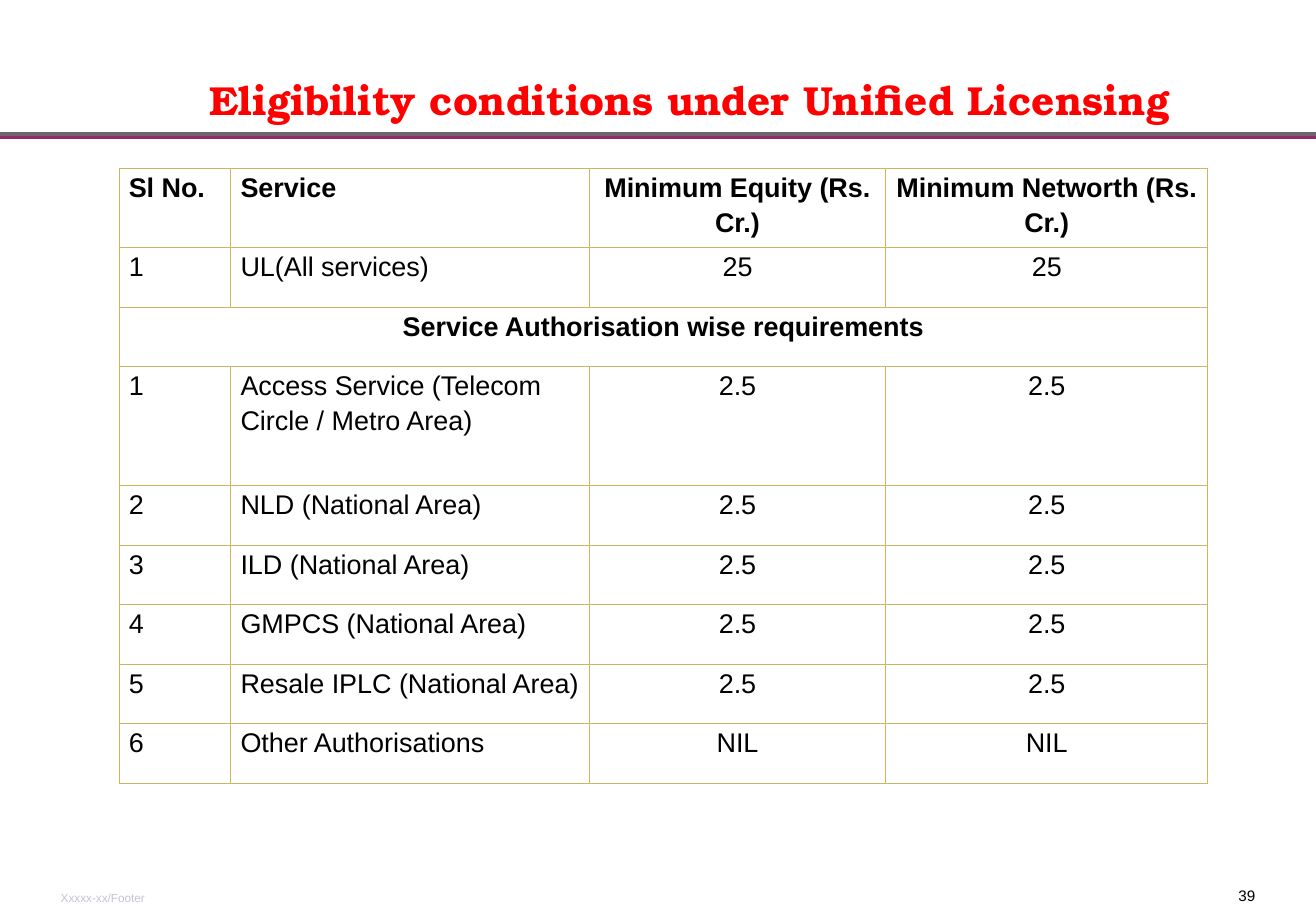
from dataclasses import dataclass

from lxml import etree
from pptx import Presentation
from pptx.dml.color import RGBColor
from pptx.enum.shapes import MSO_CONNECTOR
from pptx.enum.text import MSO_ANCHOR, PP_ALIGN
from pptx.oxml.ns import qn
from pptx.util import Emu, Pt

EMU_PER_PX = 9144
LEFT, CENTER, RIGHT = PP_ALIGN.LEFT, PP_ALIGN.CENTER, PP_ALIGN.RIGHT
TOP, MIDDLE, BOTTOM = MSO_ANCHOR.TOP, MSO_ANCHOR.MIDDLE, MSO_ANCHOR.BOTTOM
STRAIGHT = MSO_CONNECTOR.STRAIGHT
WHITE, BLACK, RED = "FFFFFF", "000000", "FF0000"
GREY, PURPLE, GOLD, PALE = "69676D", "932968", "CCB661", "C9C2D1"
SANS, SERIF = "Arial", "TeX Gyre Bonum"


@dataclass(frozen=True)
class Style:
    size: int
    color: str = BLACK
    font: str = SANS
    bold: bool = False


@dataclass(frozen=True)
class Label:
    text: str
    x: int
    y: int
    w: int
    h: int
    style: Style
    align: PP_ALIGN
    anchor: MSO_ANCHOR
    pad: int = 0
    wrap: bool = False


LABELS = [
    Label("39", 1012, 730, 21, 15, Style(9), RIGHT, TOP),
    Label("Xxxxx-xx/Footer", 50, 733, 70, 12, Style(7, PALE), LEFT, MIDDLE),
    Label("Eligibility conditions under Unified Licensing", 161, 30, 813, 77,
          Style(24, RED, SERIF, True), CENTER, BOTTOM, 5, True),
]
HEADER = ("Sl No.", "Service", "Minimum Equity (Rs. Cr.)",
          "Minimum Networth (Rs. Cr.)")
SECTION = ("Service Authorisation wise requirements",)
ROWS = [
    HEADER,
    ("1", "UL(All services)", "25", "25"),
    SECTION,
    ("1", "Access Service (Telecom Circle / Metro Area)", "2.5", "2.5"),
    ("2", "NLD (National Area)", "2.5", "2.5"),
    ("3", "ILD (National Area)", "2.5", "2.5"),
    ("4", "GMPCS (National Area)", "2.5", "2.5"),
    ("5", "Resale IPLC (National Area)", "2.5", "2.5"),
    ("6", "Other Authorisations", "NIL", "NIL"),
]
COL_WIDTHS = [92, 295, 244, 265]
ROW_HEIGHT = 49
TALL_ROWS = {0: 65, 3: 98}


def px(n: int) -> Emu:
    return Emu(n * EMU_PER_PX)


def rgb(color: str) -> RGBColor:
    return RGBColor.from_string(color)


def add_run(p, text: str, style: Style) -> None:
    r = p.add_run()
    r.text = text
    r.font.size = Pt(style.size)
    r.font.name = style.font
    r.font.bold = style.bold
    r.font.color.rgb = rgb(style.color)


def add_label(slide, label: Label) -> None:
    box = slide.shapes.add_textbox(px(label.x), px(label.y), px(label.w), px(label.h))
    tf = box.text_frame
    tf.word_wrap = label.wrap
    tf.vertical_anchor = label.anchor
    tf.margin_left = tf.margin_right = 0
    tf.margin_top = tf.margin_bottom = px(label.pad)
    p = tf.paragraphs[0]
    p.alignment = label.align
    add_run(p, label.text, label.style)


def add_rule(slide) -> None:
    line = slide.shapes.add_connector(STRAIGHT, px(1083), px(110), 0, px(110))
    line.line.color.rgb = rgb(GREY)
    line.line.width = Pt(2.25)
    effects = etree.SubElement(line._element.spPr, qn("a:effectLst"))
    shadow = etree.SubElement(effects, qn("a:outerShdw"), blurRad="0",
                              dist=str(Pt(2)), dir="5400000",
                              algn="ctr", rotWithShape="0")
    etree.SubElement(shadow, qn("a:srgbClr"), val=PURPLE)


def add_borders(cell) -> None:
    tc_pr = cell._tc.get_or_add_tcPr()
    for side in ("lnL", "lnR", "lnT", "lnB"):
        ln = etree.SubElement(tc_pr, qn(f"a:{side}"), w=str(Pt(0.75)))
        fill = etree.SubElement(ln, qn("a:solidFill"))
        etree.SubElement(fill, qn("a:srgbClr"), val=GOLD)


def format_cell(cell) -> None:
    add_borders(cell)
    cell.fill.solid()
    cell.fill.fore_color.rgb = rgb(WHITE)
    cell.margin_left = cell.margin_right = px(8)
    cell.margin_top = cell.margin_bottom = 0


def add_requirements(slide) -> None:
    heights = [TALL_ROWS.get(i, ROW_HEIGHT) for i in range(len(ROWS))]
    frame = slide.shapes.add_table(len(ROWS), len(COL_WIDTHS), px(98), px(139),
                                   px(sum(COL_WIDTHS)), px(sum(heights)))
    table = frame.table
    table.first_row = table.horz_banding = False
    for column, width in zip(table.columns, COL_WIDTHS):
        column.width = px(width)
    for row, height in zip(table.rows, heights):
        row.height = px(height)
    for cell in table.iter_cells():
        format_cell(cell)
    for i, texts in enumerate(ROWS):
        if texts is SECTION:
            table.cell(i, 0).merge(table.cell(i, len(COL_WIDTHS) - 1))
        style = Style(16, bold=texts in (HEADER, SECTION))
        for j, text in enumerate(texts):
            p = table.cell(i, j).text_frame.paragraphs[0]
            p.alignment = CENTER if j > 1 or texts is SECTION else LEFT
            p.line_spacing = 1.15
            add_run(p, text, style)


def main() -> None:
    prs = Presentation()
    prs.slide_width, prs.slide_height = px(1083), px(750)
    s = prs.slides.add_slide(prs.slide_layouts[6])
    add_rule(s)
    for label in LABELS:
        add_label(s, label)
    add_requirements(s)
    prs.save("out.pptx")


if __name__ == "__main__":
    main()
